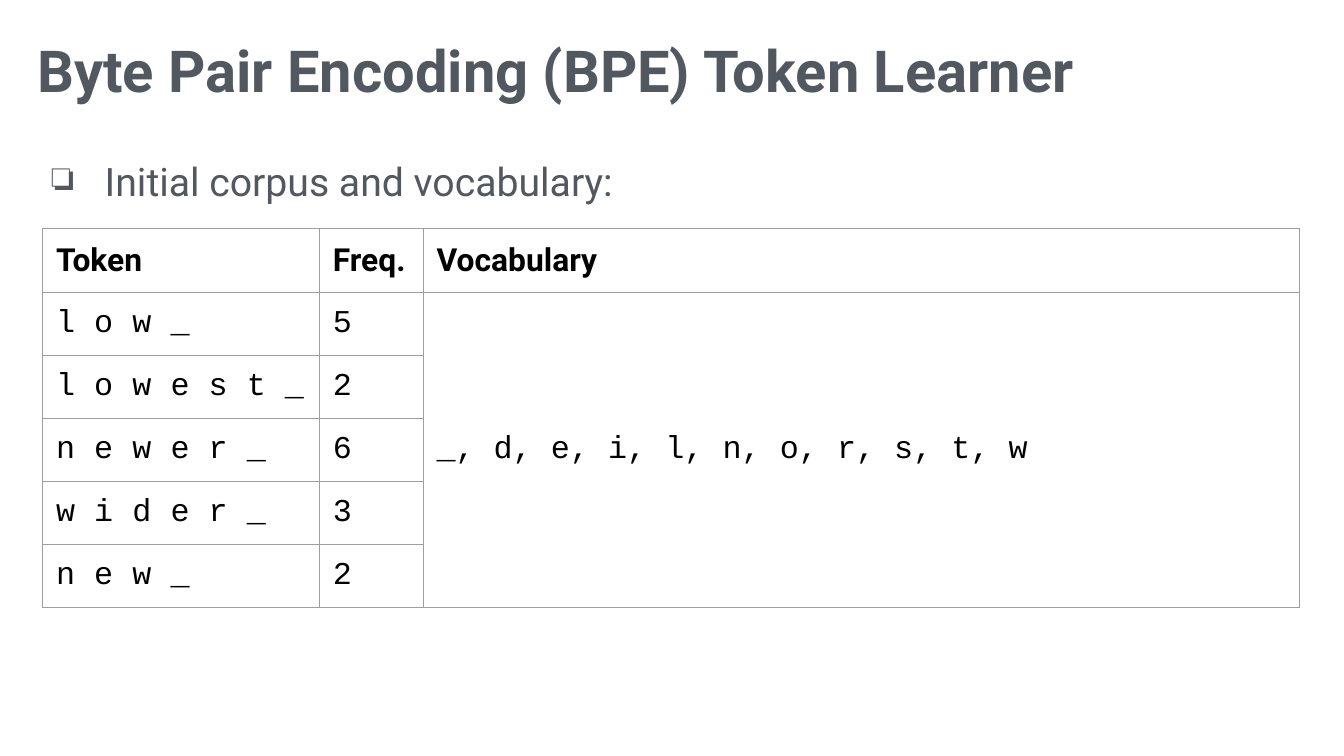
from dataclasses import dataclass

from lxml import etree
from pptx import Presentation
from pptx.dml.color import RGBColor
from pptx.enum.text import MSO_ANCHOR, MSO_AUTO_SIZE, PP_ALIGN
from pptx.oxml.ns import qn
from pptx.util import Cm, Pt

TOP, MIDDLE = MSO_ANCHOR.TOP, MSO_ANCHOR.MIDDLE
NO_FIT = MSO_AUTO_SIZE.NONE
LEFT = PP_ALIGN.LEFT


@dataclass(frozen=True)
class Theme:
    slate: str = "525860"
    black: str = "000000"
    grid: str = "9E9E9E"
    sans: str = "Roboto"
    mono: str = "Courier New"
    title_size: int = 31
    body_size: int = 21
    table_size: int = 17
    grid_width: float = 0.75


THEME = Theme()

TITLE = "Byte Pair Encoding (BPE) Token Learner"
BULLET = "Initial corpus and vocabulary:"
HEADERS = ("Token", "Freq.", "Vocabulary")
CORPUS = (
    ("l o w _", "5"),
    ("l o w e s t _", "2"),
    ("n e w e r _", "6"),
    ("w i d e r _", "3"),
    ("n e w _", "2"),
)
VOCABULARY = "_, d, e, i, l, n, o, r, s, t, w"
COLUMN_WIDTHS = (5.23, 1.96, 16.56)
ROW_HEIGHT = 1.19


def set_attributes(obj, values):
    for name, value in values.items():
        setattr(obj, name, value)


def set_margins(obj, margin):
    sides = ("left", "top", "right", "bottom")
    set_attributes(obj, {f"margin_{side}": Cm(margin) for side in sides})


def add_text(p, text, size, color, font, bold=False):
    r = p.add_run()
    r.text = text
    set_attributes(r.font, {"name": font, "size": Pt(size), "bold": bold})
    r.font.color.rgb = RGBColor.from_string(color)


def format_frame(tf):
    set_attributes(tf, {"word_wrap": True, "auto_size": NO_FIT, "vertical_anchor": TOP})
    set_margins(tf, 0.15)


def add_title(slide, text):
    sp = slide.shapes.title
    set_attributes(sp, {"left": Cm(0.56), "top": Cm(0.51),
                        "width": Cm(24.2), "height": Cm(1.25)})
    format_frame(sp.text_frame)
    p = sp.text_frame.paragraphs[0]
    p.alignment = LEFT
    add_text(p, text, THEME.title_size, THEME.slate, THEME.sans, True)


def add_bullet(p, char, color):
    pPr = p._p.get_or_add_pPr()
    pPr.set("marL", str(Cm(1.27)))
    pPr.set("indent", str(Cm(-1.0)))
    buClr = etree.SubElement(pPr, qn("a:buClr"))
    etree.SubElement(buClr, qn("a:srgbClr"), val=color)
    etree.SubElement(pPr, qn("a:buChar"), char=char)


def add_body(slide, text):
    sp = slide.shapes.add_textbox(Cm(0.56), Cm(2.69), Cm(23.75), Cm(9.98))
    format_frame(sp.text_frame)
    p = sp.text_frame.paragraphs[0]
    p.line_spacing = 1.15
    add_bullet(p, "❏", THEME.slate)
    add_text(p, text, THEME.body_size, THEME.slate, THEME.sans)


def add_borders(cell):
    tcPr = cell._tc.get_or_add_tcPr()
    # Border lines come before the fill in the cell properties
    for i, tag in enumerate(("a:lnL", "a:lnR", "a:lnT", "a:lnB")):
        ln = etree.Element(qn(tag), w=str(Pt(THEME.grid_width)))
        fill = etree.SubElement(ln, qn("a:solidFill"))
        etree.SubElement(fill, qn("a:srgbClr"), val=THEME.grid)
        tcPr.insert(i, ln)


def fill_cell(cell, text, font, bold):
    cell.fill.background()
    cell.vertical_anchor = MIDDLE
    set_margins(cell, 0.25)
    add_borders(cell)
    if text:
        add_text(cell.text_frame.paragraphs[0], text, THEME.table_size,
                 THEME.black, font, bold)


def add_corpus_table(slide):
    rows = [HEADERS] + [(token, freq, "") for token, freq in CORPUS]
    rows[1] = (*CORPUS[0], VOCABULARY)
    table = slide.shapes.add_table(
        len(rows), len(HEADERS), Cm(0.81), Cm(4.32),
        Cm(sum(COLUMN_WIDTHS)), Cm(ROW_HEIGHT * len(rows))).table
    set_attributes(table, {"first_row": False, "horz_banding": False})
    for column, width in zip(table.columns, COLUMN_WIDTHS):
        column.width = Cm(width)
    for i, row in enumerate(rows):
        table.rows[i].height = Cm(ROW_HEIGHT)
        for j, text in enumerate(row):
            font = THEME.mono if i else THEME.sans
            fill_cell(table.cell(i, j), text, font, i == 0)
    # One vocabulary cell spans all corpus rows
    table.cell(1, 2).merge(table.cell(len(CORPUS), 2))


def main():
    prs = Presentation()
    set_attributes(prs, {"slide_width": Cm(25.4), "slide_height": Cm(14.29)})
    slide = prs.slides.add_slide(prs.slide_layouts[5])
    # Heading and bullet
    add_title(slide, TITLE)
    add_body(slide, BULLET)
    # Corpus with its starting vocabulary
    add_corpus_table(slide)
    prs.save("out.pptx")


if __name__ == "__main__":
    main()
